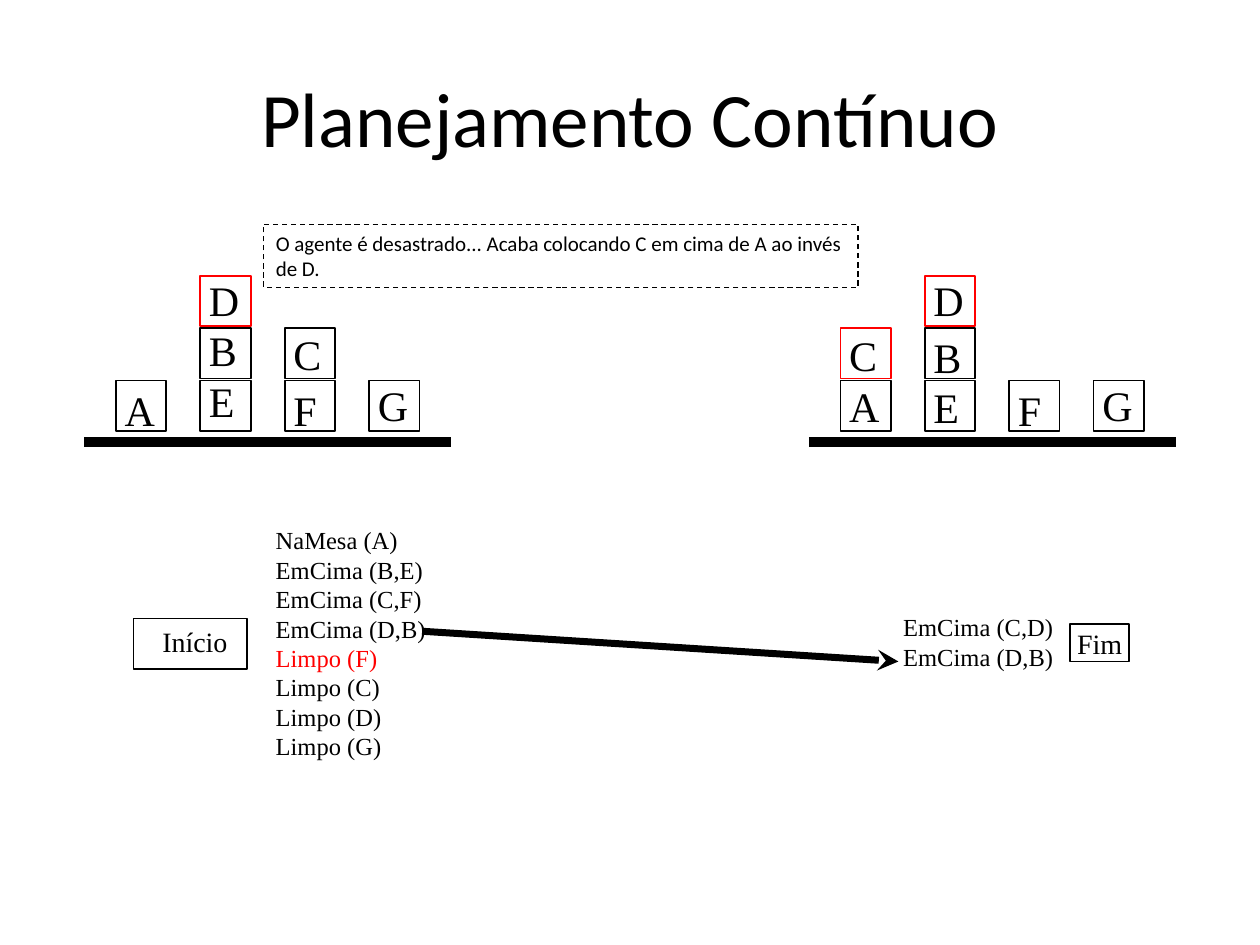
from dataclasses import dataclass

from lxml.etree import SubElement
from pptx import Presentation
from pptx.dml.color import RGBColor
from pptx.enum.dml import MSO_LINE
from pptx.enum.shapes import MSO_CONNECTOR as Connector, MSO_SHAPE as Preset
from pptx.enum.text import MSO_ANCHOR as Anchor, PP_ALIGN as Align
from pptx.oxml.ns import qn
from pptx.shapes.autoshape import Shape
from pptx.shapes.connector import Connector as Line
from pptx.util import Inches, Length, Pt


@dataclass(frozen=True)
class Theme:
    ink: RGBColor = RGBColor(0, 0, 0)
    alert: RGBColor = RGBColor(255, 0, 0)
    sans: str = "Calibri"
    serif: str = "Times New Roman"
    title: int = 44
    letter: int = 24
    step: int = 16
    fact: int = 14
    note: int = 12


@dataclass(frozen=True)
class Area:
    col: float
    row: float
    cols: float
    rows: float

    def lengths(self) -> list[Length]:
        return [grid(n) for n in (self.col, self.row, self.cols, self.rows)]


@dataclass(frozen=True)
class Letters:
    stack: int
    row: float
    names: tuple[str, ...]


@dataclass(frozen=True)
class Scene:
    col: float
    heights: tuple[int, ...]
    red: tuple[tuple[int, int], ...]
    letters: tuple[Letters, ...]


THEME = Theme()
COLUMNS, ROWS = 100, 75
BLOCK, STACK_PITCH, LEVEL_PITCH = 4, 6.7, 4.15
FLOOR_ROW, BASE_ROW, FLOOR_COLS, FIRST_STACK = 35.1, 30.2, 29.1, 2.5

SCENES = (
    Scene(6.7, (1, 3, 2, 1), ((1, 2),), (
        Letters(0, 30, ("A",)), Letters(1, 21.3, ("D", "B", "E")),
        Letters(2, 25.6, ("C",)), Letters(2, 30, ("F",)),
        Letters(3, 29.6, ("G",)))),
    Scene(64.2, (2, 3, 1, 1), ((0, 1), (1, 2)), (
        Letters(0, 25.7, ("C", "A")), Letters(1, 21.3, ("D",)),
        Letters(1, 25.8, ("B", "E")), Letters(2, 30, ("F",)),
        Letters(3, 29.6, ("G",)))),
)
START_FACTS = ("NaMesa (A)", "EmCima (B,E)", "EmCima (C,F)", "EmCima (D,B)",
               "Limpo (F)", "Limpo (C)", "Limpo (D)", "Limpo (G)")
GOAL_FACTS = ("EmCima (C,D)", "EmCima (D,B)")


def grid(cells: float) -> Length:
    """Turn grid cells, ten to the inch, into a length."""
    return Inches(cells / 10)


def write(shape: Shape, lines: tuple[str, ...], size: int, font: str,
          wrap: bool = True, anchor: Anchor = Anchor.TOP,
          align: Align = Align.LEFT, red: tuple[str, ...] = ()) -> None:
    """Fill a shape with one paragraph per line."""
    frame = shape.text_frame
    frame.word_wrap = wrap
    frame.vertical_anchor = anchor
    frame.text = "\n".join(lines)
    for paragraph, line in zip(frame.paragraphs, lines):
        paragraph.alignment = align
        paragraph.font.size = Pt(size)
        paragraph.font.name = font
        paragraph.font.color.rgb = THEME.alert if line in red else THEME.ink


def add_text(shapes, area: Area, *lines: str, size: int,
             font: str = THEME.serif, **layout) -> None:
    """Place a text box on the grid."""
    write(shapes.add_textbox(*area.lengths()), lines, size, font, **layout)


def add_frame(shapes, area: Area, color: RGBColor = THEME.ink,
              width: float = 1) -> Shape:
    """Draw an unfilled rectangle."""
    frame = shapes.add_shape(Preset.RECTANGLE, *area.lengths())
    frame.shadow.inherit = False
    frame.fill.background()
    frame.line.color.rgb = color
    frame.line.width = Pt(width)
    return frame


def add_line(shapes, start: tuple[float, float], end: tuple[float, float],
             width: float) -> Line:
    """Draw a straight line without shadow."""
    line = shapes.add_connector(Connector.STRAIGHT, *map(grid, start + end))
    line.line.color.rgb = THEME.ink
    line.line.width = Pt(width)
    SubElement(line._element.spPr, qn("a:effectLst"))
    return line


def add_scene(shapes, scene: Scene) -> None:
    """Draw a floor with its stacks of lettered blocks."""
    add_line(shapes, (scene.col, FLOOR_ROW),
             (scene.col + FLOOR_COLS, FLOOR_ROW), 6)
    left = [scene.col + FIRST_STACK + STACK_PITCH * stack
            for stack in range(len(scene.heights))]
    blocks = [(stack, level) for stack, height in enumerate(scene.heights)
              for level in range(height)]
    for stack, level in sorted(blocks, key=lambda block: block in scene.red):
        color = THEME.alert if (stack, level) in scene.red else THEME.ink
        row = BASE_ROW - LEVEL_PITCH * level
        add_frame(shapes, Area(left[stack], row, BLOCK, BLOCK), color)
    for label in scene.letters:
        area = Area(left[label.stack] - 0.3, label.row,
                    4.5, 1.2 + 3.9 * len(label.names))
        add_text(shapes, area, *label.names, size=THEME.letter)


def main() -> None:
    """Build and save the slide."""
    deck = Presentation()
    deck.slide_width, deck.slide_height = grid(COLUMNS), grid(ROWS)
    shapes = deck.slides.add_slide(deck.slide_layouts[6]).shapes

    add_text(shapes, Area(5, 3, 90, 12.5), "Planejamento Contínuo",
             size=THEME.title, font=THEME.sans, anchor=Anchor.MIDDLE,
             align=Align.CENTER)

    add_frame(shapes, Area(10.6, 49.1, 9, 4))
    add_text(shapes, Area(11.9, 49.1, 7.3, 3.7), "Início",
             size=THEME.step, wrap=False)
    add_frame(shapes, Area(84.9, 49.5, 4.7, 3))
    add_text(shapes, Area(84.5, 49.2, 5.7, 3.7), "Fim",
             size=THEME.step, wrap=False)
    add_text(shapes, Area(20.9, 41.2, 15, 19.9), *START_FACTS,
             size=THEME.fact, red=("Limpo (F)",))
    add_text(shapes, Area(70.7, 48.1, 14, 5.7), *GOAL_FACTS,
             size=THEME.fact, wrap=False)

    note = add_frame(shapes, Area(20.9, 17.8, 47.2, 5), width=0.75)
    note.line.dash_style = MSO_LINE.DASH
    write(note, ("O agente é desastrado... Acaba colocando C em cima de A "
                 "ao invés de D.",), THEME.note, THEME.sans)

    for scene in SCENES:
        add_scene(shapes, scene)

    plan = add_line(shapes, (33.5, 50.1), (71.3, 52.5), 4)
    SubElement(plan.line._get_or_add_ln(), qn("a:tailEnd"), type="stealth")

    deck.save("out.pptx")


if __name__ == "__main__":
    main()
